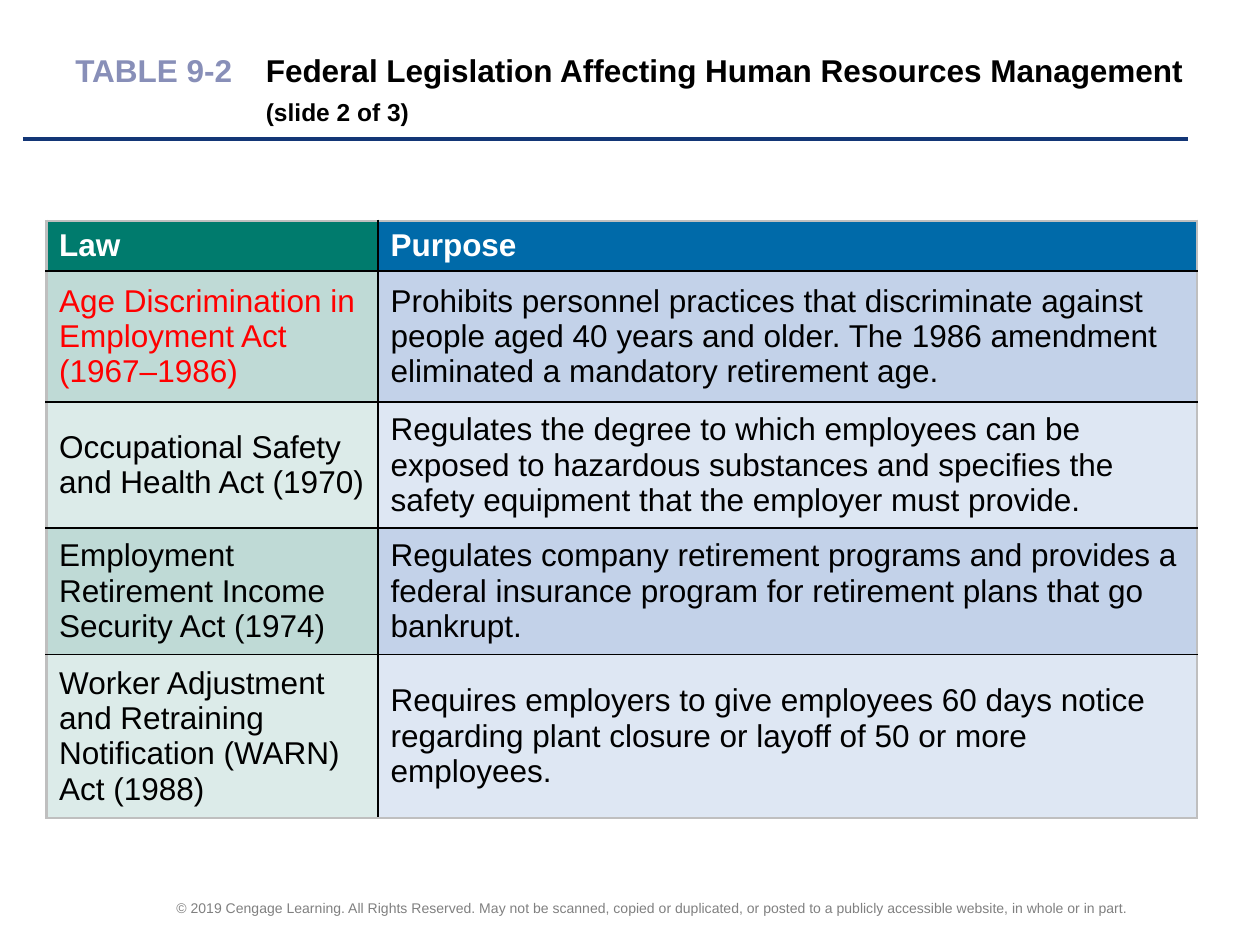
from dataclasses import dataclass

from lxml import etree
from pptx import Presentation
from pptx.dml.color import RGBColor
from pptx.enum.shapes import MSO_CONNECTOR
from pptx.enum.text import MSO_ANCHOR, PP_ALIGN
from pptx.oxml.ns import qn
from pptx.util import Cm, Pt

STRAIGHT = MSO_CONNECTOR.STRAIGHT
MIDDLE = MSO_ANCHOR.MIDDLE
LEFT, CENTER = PP_ALIGN.LEFT, PP_ALIGN.CENTER
BLANK_LAYOUT = 6


@dataclass(frozen=True)
class Theme:
    font: str = "Arial"
    body_size: float = 18
    subtitle_size: float = 14
    footer_size: float = 8
    text: str = "000000"
    header_text: str = "FFFFFF"
    label: str = "888FB8"
    highlight: str = "FF0000"
    footer: str = "808080"
    rule: str = "133676"
    grid: str = "000000"
    frame: str = "BFBFBF"
    header_fills: tuple = ("007B6D", "006AA9")
    band_fills: tuple = (("BFDAD6", "C3D2E9"), ("DCEBE9", "DEE7F3"))


HEADERS = ("Law", "Purpose")
LAWS = (
    ("Age Discrimination in Employment Act (1967–1986)",
     "Prohibits personnel practices that discriminate against people aged 40 "
     "years and older. The 1986 amendment eliminated a mandatory retirement age."),
    ("Occupational Safety and Health Act (1970)",
     "Regulates the degree to which employees can be exposed to hazardous "
     "substances and specifies the safety equipment that the employer must provide."),
    ("Employment Retirement Income Security Act (1974)",
     "Regulates company retirement programs and provides a federal insurance "
     "program for retirement plans that go bankrupt."),
    ("Worker Adjustment and Retraining Notification (WARN) Act (1988)",
     "Requires employers to give employees 60 days notice regarding plant "
     "closure or layoff of 50 or more employees."),
)
HIGHLIGHTED_ROW = 1
COLUMN_WIDTHS = (6.68, 16.51)
ROW_HEIGHTS = (0.97, 2.64, 2.39, 2.39, 3.1)
COPYRIGHT = (
    "© 2019 Cengage Learning. All Rights Reserved. May not be scanned, copied or "
    "duplicated, or posted to a publicly accessible website, in whole or in part."
)


class SlideBuilder:
    def __init__(self, slide, theme):
        self.slide = slide
        self.theme = theme

    def format_run(self, run, size, color, bold=False):
        run.font.name = self.theme.font
        run.font.size = Pt(size)
        run.font.bold = bold
        run.font.color.rgb = RGBColor.from_string(color)

    def add_text_box(self, left, top, width, height, alignment=LEFT):
        """Add an empty box and return its first paragraph."""
        box = self.slide.shapes.add_textbox(Cm(left), Cm(top), Cm(width), Cm(height))
        frame = box.text_frame
        frame.word_wrap = True
        frame.vertical_anchor = MIDDLE
        frame.margin_right = 0
        paragraph = frame.paragraphs[0]
        paragraph.alignment = alignment
        return paragraph

    def add_title(self, label, title, subtitle):
        theme = self.theme
        paragraph = self.add_text_box(1.27, 0.84, 22.86, 1.9)
        paragraph.line_spacing = Pt(21.7)
        properties = paragraph._p.get_or_add_pPr()
        indent = Cm(3.84)
        properties.set("marL", str(indent))
        properties.set("indent", str(-indent))
        paragraph.text = f"{label}\t"
        self.format_run(paragraph.runs[0], theme.body_size, theme.label, True)
        for text, size in ((title, theme.body_size), (subtitle, theme.subtitle_size)):
            run = paragraph.add_run()
            run.text = text
            self.format_run(run, size, theme.text, True)
            if text == title:
                paragraph.add_line_break()

    def add_footer(self, text):
        paragraph = self.add_text_box(1.9, 17.98, 22.27, 0.64, CENTER)
        paragraph.text = text
        self.format_run(paragraph.runs[0], self.theme.footer_size, self.theme.footer)

    def add_rule(self, left, right, y, width):
        line = self.slide.shapes.add_connector(
            STRAIGHT, Cm(left), Cm(y), Cm(right), Cm(y))
        line.line.color.rgb = RGBColor.from_string(self.theme.rule)
        line.line.width = Pt(width)
        etree.SubElement(line._element.spPr, qn("a:effectLst"))

    def set_borders(self, cell, outer_sides):
        """Draw the frame colour on outer sides and the grid colour elsewhere."""
        properties = cell._tc.get_or_add_tcPr()
        for position, side in enumerate(("L", "R", "T", "B")):
            is_outer = side in outer_sides
            color = self.theme.frame if is_outer else self.theme.grid
            border = etree.Element(qn(f"a:ln{side}"), w=str(Pt(1.5 if is_outer else 1)))
            fill = etree.SubElement(border, qn("a:solidFill"))
            etree.SubElement(fill, qn("a:srgbClr"), val=color)
            properties.insert(position, border)

    def add_table(self, left, top, rows):
        theme = self.theme
        shape = self.slide.shapes.add_table(
            len(rows), len(COLUMN_WIDTHS), Cm(left), Cm(top),
            Cm(sum(COLUMN_WIDTHS)), Cm(sum(ROW_HEIGHTS)))
        table = shape.table
        for column, width in zip(table.columns, COLUMN_WIDTHS):
            column.width = Cm(width)
        for row, height in zip(table.rows, ROW_HEIGHTS):
            row.height = Cm(height)
        for row_index, texts in enumerate(rows):
            is_header = row_index == 0
            fills = theme.header_fills if is_header else theme.band_fills[(row_index - 1) % 2]
            for column_index, text in enumerate(texts):
                cell = table.cell(row_index, column_index)
                cell.text_frame.text = text
                cell.vertical_anchor = MIDDLE
                cell.fill.solid()
                cell.fill.fore_color.rgb = RGBColor.from_string(fills[column_index])
                color = theme.header_text if is_header else theme.text
                if row_index == HIGHLIGHTED_ROW and column_index == 0:
                    color = theme.highlight
                run = cell.text_frame.paragraphs[0].runs[0]
                self.format_run(run, theme.body_size, color, is_header)
                outer_sides = "L" if column_index == 0 else "R"
                if is_header:
                    outer_sides += "T"
                elif row_index == len(rows) - 1:
                    outer_sides += "B"
                self.set_borders(cell, outer_sides)


def main():
    presentation = Presentation()
    presentation.slide_width = Cm(25.4)
    presentation.slide_height = Cm(19.05)
    slide = presentation.slides.add_slide(presentation.slide_layouts[BLANK_LAYOUT])
    builder = SlideBuilder(slide, Theme())
    builder.add_footer(COPYRIGHT)
    builder.add_rule(0.46, 23.95, 2.81, 2.25)
    builder.add_title(
        "TABLE 9-2",
        "Federal Legislation Affecting Human Resources Management",
        "(slide 2 of 3)")
    builder.add_table(0.94, 4.45, (HEADERS, *LAWS))
    presentation.save("out.pptx")


if __name__ == "__main__":
    main()
